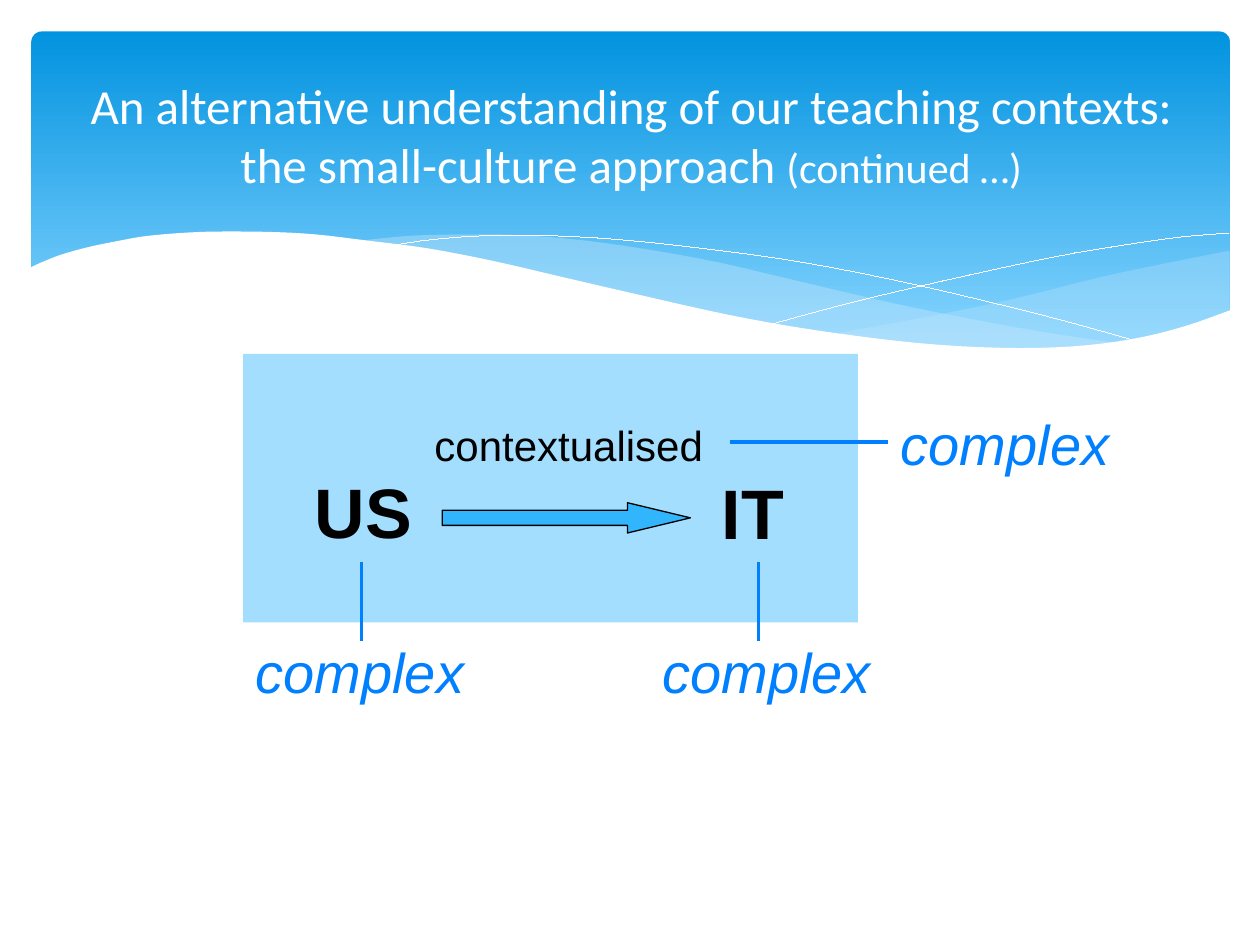
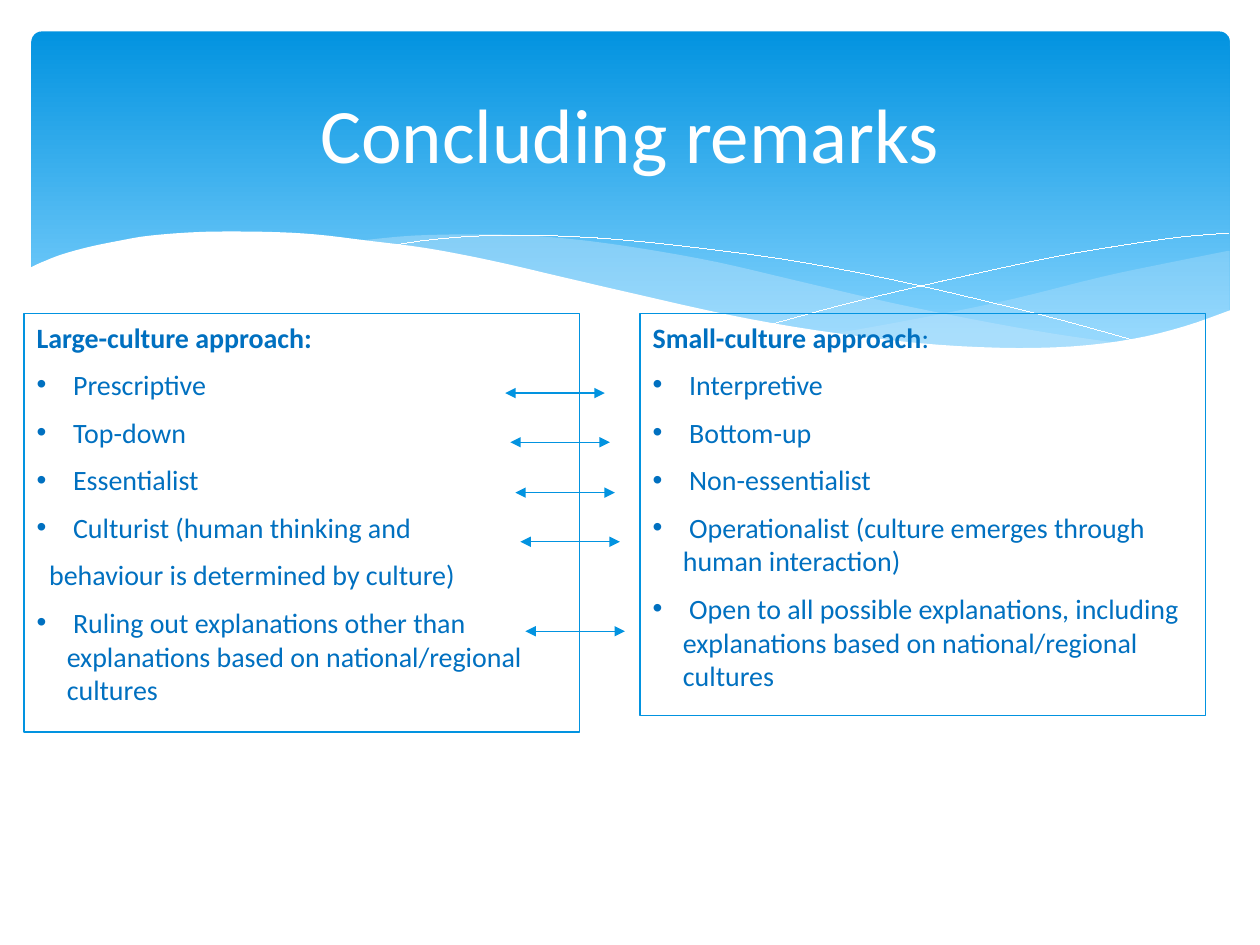
from lxml import etree
from pptx import Presentation
from pptx.dml.color import RGBColor
from pptx.enum.shapes import MSO_CONNECTOR, MSO_SHAPE
from pptx.enum.text import MSO_ANCHOR, MSO_AUTO_SIZE, PP_ALIGN
from pptx.oxml.ns import qn
from pptx.util import Emu, Pt

SCALE = 9144
RECT, ROUND, ARROW = MSO_SHAPE.RECTANGLE, MSO_SHAPE.ROUNDED_RECTANGLE, MSO_SHAPE.RIGHT_ARROW
STRAIGHT = MSO_CONNECTOR.STRAIGHT
TOP, MIDDLE = MSO_ANCHOR.TOP, MSO_ANCHOR.MIDDLE
CENTER, LEFT = PP_ALIGN.CENTER, PP_ALIGN.LEFT
FIXED = MSO_AUTO_SIZE.NONE
WHITE = RGBColor(0xFF, 0xFF, 0xFF)
BLACK = RGBColor(0, 0, 0)
DEEP = RGBColor(0x02, 0x93, 0xE0)
LIGHT = RGBColor(0x83, 0xD3, 0xFE)
PALE = RGBColor(0xC6, 0xE7, 0xFC)
SKY = RGBColor(0x31, 0xB6, 0xFD)
VIVID = RGBColor(0x00, 0x80, 0xFF)
NAVY = RGBColor(0x00, 0x70, 0xC0)

RIGHT_WAVE = [
    [(975, 199), (935, 207), (891, 216), (861, 223), (805, 237), (753, 248), (706, 257), (661, 265)],
    [(661, 265), (705, 271), (757, 276), (814, 278), (863, 275), (905, 269), (942, 259), (976, 247)],
    [(976, 247), (976, 199)],
]
MID_WAVE = [
    [(893, 273), (837, 265), (775, 254), (706, 240), (629, 222), (569, 208), (514, 198),
     (465, 191), (420, 187), (380, 186), (328, 187), (286, 191)],
    [(286, 191), (342, 199), (404, 211), (449, 222), (530, 240), (601, 255), (665, 266),
     (722, 274), (785, 278), (848, 277), (893, 273)],
]
FALL_ARC = [[(309, 195), (344, 190), (387, 187), (433, 187), (489, 190), (556, 197),
             (636, 208), (727, 226), (831, 251), (907, 272)]]
RISE_ARC = [[(613, 257), (672, 241), (748, 223), (836, 204), (895, 194), (938, 188), (975, 185)]]
WHITE_WAVE = [
    [(977, 246), (940, 259), (899, 269), (850, 275), (793, 276), (726, 272), (647, 262),
     (579, 250), (503, 233), (447, 220), (391, 207), (339, 197), (292, 191), (250, 186),
     (211, 184), (161, 184), (119, 187), (95, 191), (75, 195), (59, 199), (46, 203),
     (36, 207), (29, 210), (23, 213)],
    [(23, 213), (23, 329)],
    [(23, 329), (977, 329)],
]

LARGE = [
    (0, [("Large-culture approach:", True)]),
    (24, [(" Prescriptive", False)]),
    (24, [(" Top-down", False)]),
    (24, [(" Essentialist", False)]),
    (24, [(" Culturist (human thinking and", False)]),
    (10, [("behaviour is determined by culture)", False)]),
    (24, [(" Ruling out explanations other than explanations based on national/regional cultures", False)]),
]
SMALL = [
    (0, [("Small-culture approach", True), (":", False)]),
    (24, [(" Interpretive", False)]),
    (24, [(" Bottom-up", False)]),
    (24, [(" Non-essentialist", False)]),
    (24, [(" Operationalist (culture emerges through human interaction)", False)]),
    (24, [(" Open to all possible explanations, including explanations based on national/regional cultures", False)]),
]


def px(n):
    return Emu(round(n * SCALE))


def place(shape, box):
    shape.left, shape.top, shape.width, shape.height = map(px, box)


def fade(shape, share):
    tint = next(shape.element.spPr.iter(qn("a:srgbClr")))
    etree.SubElement(tint, qn("a:alpha")).set("val", str(share * 1000))


def paint(shape, fill=None, line=None, width=0):
    shape.shadow.inherit = False
    if fill is None:
        shape.fill.background()
    else:
        shape.fill.solid()
        shape.fill.fore_color.rgb = fill
    if line is None:
        shape.line.fill.background()
    else:
        shape.line.color.rgb = line
        shape.element.spPr.find(qn("a:ln")).set("w", str(Pt(width)))


def write(para, text, size, color, face="Calibri", bold=False, slant=False):
    run = para.add_run()
    run.text = text
    font = run.font
    font.name, font.size, font.bold, font.italic = face, Pt(size), bold, slant
    font.color.rgb = color


def curve(knots, steps=4):
    ends = [knots[0], *knots, knots[-1]]
    dots = [knots[0]]
    for a, b, c, d in zip(ends, ends[1:], ends[2:], ends[3:]):
        for i in range(1, steps + 1):
            t = i / steps
            dots.append(tuple(
                (2 * q + (r - p) * t + (2 * p - 5 * q + 4 * r - s) * t ** 2
                 + (3 * q - p - 3 * r + s) * t ** 3) / 2
                for p, q, r, s in zip(a, b, c, d)))
    return dots


def wave(shapes, parts, fill=None, line=None):
    dots = [(px(x), px(y)) for part in parts for x, y in curve(part)]
    path = shapes.build_freeform(*dots[0], scale=1.0)
    path.add_line_segments(dots[1:], close=fill is not None)
    shape = path.convert_to_shape()
    paint(shape, fill, line)
    return shape


def band(shapes, box):
    panel = shapes.add_shape(ROUND, *map(px, box))
    panel.adjustments[0] = 0.03
    paint(panel, DEEP)
    panel.fill.gradient()
    panel.fill.gradient_angle = 270
    for stop, color, spot in zip(panel.fill.gradient_stops, (DEEP, LIGHT), (0, 0.9)):
        stop.color.rgb = color
        stop.position = spot
    right = wave(shapes, RIGHT_WAVE, PALE)
    fade(right, 29)
    mid = wave(shapes, MID_WAVE, PALE)
    fade(mid, 40)
    return [panel, right, mid, wave(shapes, FALL_ARC, line=WHITE),
            wave(shapes, RISE_ARC, line=WHITE), wave(shapes, WHITE_WAVE, WHITE)]


def share(deck, parts):
    tree = deck.slide_master.shapes.element
    for i, part in enumerate(parts):
        part.element.nvSpPr.cNvPr.id = 20 + i
        tree.insert(2 + i, part.element)


def head(slide, box, runs):
    title = slide.shapes.title
    place(title, box)
    frame = title.text_frame
    frame.auto_size = FIXED
    frame.word_wrap = True
    frame.vertical_anchor = MIDDLE
    para = frame.paragraphs[0]
    para.alignment = CENTER
    for text, size in runs:
        write(para, text, size, WHITE)


def label(shapes, box, text, size, color, bold=False, slant=False):
    shape = shapes.add_textbox(*map(px, box))
    shape.text_frame.word_wrap = False
    write(shape.text_frame.paragraphs[0], text, size, color, "Arial", bold, slant)
    return shape


def link(shapes, start, end, color, width, heads=False):
    line = shapes.add_connector(STRAIGHT, *map(px, start + end))
    line.line.color.rgb = color
    line.line.width = Pt(width)
    if heads:
        stroke = line.element.spPr.find(qn("a:ln"))
        for name in ("a:headEnd", "a:tailEnd"):
            etree.SubElement(stroke, qn(name)).set("type", "triangle")
    etree.SubElement(line.element.spPr, qn("a:effectLst"))
    return line


def scheme(shapes, box):
    x, y = box[:2]
    panel = shapes.add_shape(RECT, *map(px, box))
    paint(panel, SKY)
    fade(panel, 44)
    label(shapes, (x + 47, y + 86, 97, 77), "US", 40, BLACK, bold=True)
    label(shapes, (x + 370, y + 87, 69, 77), "IT", 40, BLACK, bold=True)
    arrow = shapes.add_shape(ARROW, *map(px, (x + 158, y + 118, 197, 24)))
    arrow.adjustments[0], arrow.adjustments[1] = 0.5, 2.08
    paint(arrow, SKY, BLACK, 0.75)
    label(shapes, (x + 142, y + 47, 234, 50), "contextualised", 24, BLACK)
    notes = [label(shapes, (x + dx, y + dy, 190, 62), "complex", 32, VIVID, slant=True)
             for dx, dy in ((0, 220), (323, 220), (512, 39))]
    side = link(shapes, (x + 386, y + 70), (x + 512, y + 70), VIVID, 2)
    side.end_connect(notes[2], 1)
    for dx in (94, 409):
        link(shapes, (x + dx, y + 165), (x + dx, y + 228), VIVID, 2)


def points(holder, box, rows):
    place(holder, box)
    holder.line.color.rgb = DEEP
    holder.line.width = Pt(0.75)
    frame = holder.text_frame
    frame.auto_size = FIXED
    frame.word_wrap = True
    frame.vertical_anchor = TOP
    for i, (inset, runs) in enumerate(rows):
        para = frame.add_paragraph() if i else frame.paragraphs[0]
        para.alignment = LEFT
        para.space_before = Pt(8)
        dotted = inset == 24
        props = para._p.get_or_add_pPr()
        props.set("marL", str(px(inset)))
        props.set("indent", str(px(-inset if dotted else 0)))
        if dotted:
            etree.SubElement(props, qn("a:buFont")).set("typeface", "Arial")
            etree.SubElement(props, qn("a:buChar")).set("char", "•")
        else:
            etree.SubElement(props, qn("a:buNone"))
        for text, bold in runs:
            write(para, text, 16, NAVY, bold=bold)


def pairs(shapes, box):
    x, y, w, h = box
    for i, dy in enumerate((0, 39, 79, 118, h)):
        left = x + 4 * i
        link(shapes, (left, y + dy), (left + w, y + dy), DEEP, 0.75, heads=True)


def main():
    deck = Presentation()
    deck.slide_width, deck.slide_height = px(1000), px(750)

    first = deck.slides.add_slide(deck.slide_layouts[5])
    share(deck, band(first.shapes, (25, 25, 951, 270)))
    head(first, (51, 28, 900, 157), [
        ("An alternative understanding of our teaching contexts: the small-culture approach ", 28),
        ("(continued …)", 24)])
    scheme(first.shapes, (193, 281, 488, 213))

    last = deck.slides.add_slide(deck.slide_layouts[3])
    head(last, (50, 37, 900, 137), [("Concluding remarks", 44)])
    points(last.placeholders[1], (19, 249, 441, 332), LARGE)
    points(last.placeholders[2], (508, 249, 449, 319), SMALL)
    pairs(last.shapes, (401, 312, 79, 189))

    deck.save("out.pptx")


if __name__ == "__main__":
    main()
